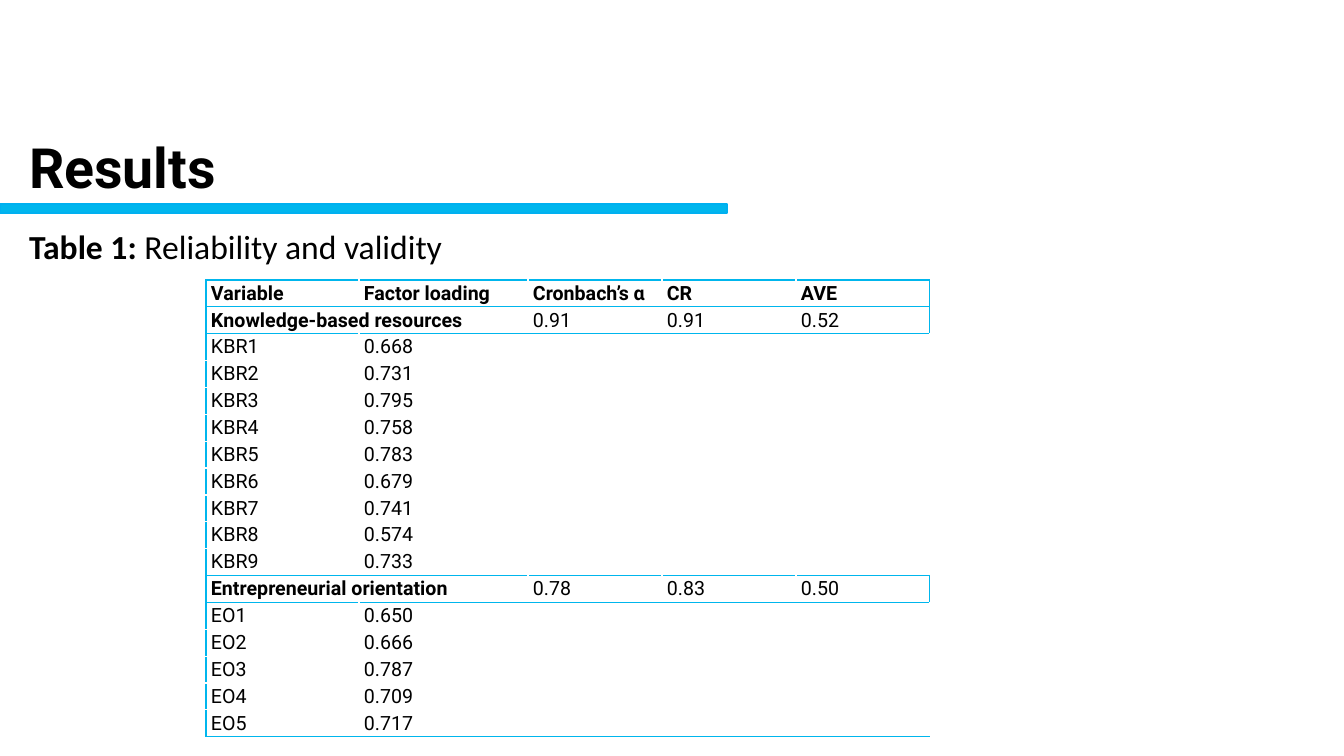
from dataclasses import dataclass
from typing import Any

from lxml import etree
from pptx import Presentation
from pptx import util as u
from pptx.dml.color import RGBColor
from pptx.enum import shapes, text
from pptx.oxml import ns

BLUE, WHITE, BLACK = "00B6ED", "FFFFFF", "000000"
COLUMN_WIDTHS = (153, 169, 134, 134, 134)
TABLE_HEIGHT = 457


@dataclass
class Box:
    left: int
    top: int
    width: int
    height: int

    def emu(self) -> tuple[int, ...]:
        return px(self.left), px(self.top), px(self.width), px(self.height)


@dataclass
class Span:
    words: str
    size: float
    font: str
    bold: bool = False


@dataclass
class Row:
    cells: tuple[str, ...]
    heading: bool = False


@dataclass
class Construct:
    name: str
    scores: tuple[str, str, str]
    code: str
    loadings: tuple[str, ...]

    def rows(self) -> list[Row]:
        items = [Row((f"{self.code}{number}", loading, "", "", ""))
                 for number, loading in enumerate(self.loadings, 1)]
        return [Row((self.name, "", *self.scores), True), *items]


CONSTRUCTS = (
    Construct("Knowledge-based resources", ("0.91", "0.91", "0.52"), "KBR",
              ("0.668", "0.731", "0.795", "0.758", "0.783",
               "0.679", "0.741", "0.574", "0.733")),
    Construct("Entrepreneurial orientation", ("0.78", "0.83", "0.50"), "EO",
              ("0.650", "0.666", "0.787", "0.709", "0.717")),
)


def px(length: int) -> int:
    return round(length * 914400 / 100.8)


def colour(value: str) -> RGBColor:
    return RGBColor.from_string(value)


def apply(target: Any, formats: dict[str, Any]) -> None:
    for name, value in formats.items():
        setattr(target, name, value)


def write(para: Any, spans: list[Span]) -> None:
    for item in spans:
        span = para.add_run()
        span.text = item.words
        apply(span.font, {"size": u.Pt(item.size), "name": item.font, "bold": item.bold})
        span.font.color.rgb = colour(BLACK)


def fill_placeholder(holder: Any, box: Box, anchor: Any, spans: list[Span]) -> None:
    apply(holder, dict(zip(("left", "top", "width", "height"), box.emu())))
    apply(holder.text_frame, {"word_wrap": True, "vertical_anchor": anchor,
                              "auto_size": text.MSO_AUTO_SIZE.NONE})
    para = holder.text_frame.paragraphs[0]
    properties = para._p.get_or_add_pPr()
    properties.set("marL", "0")
    properties.set("indent", "0")
    etree.SubElement(properties, ns.qn("a:buNone"))
    apply(para, {"alignment": text.PP_ALIGN.LEFT, "line_spacing": 0.9,
                 "space_before": u.Pt(0)})
    write(para, spans)


def add_border(cell: Any, side: str, value: str) -> None:
    line = etree.SubElement(cell._tc.get_or_add_tcPr(), ns.qn(f"a:ln{side}"),
                            w=str(u.Pt(1)))
    fill = etree.SubElement(line, ns.qn("a:solidFill"))
    etree.SubElement(fill, ns.qn("a:srgbClr"), val=value)


def add_results_table(page: Any, rows: list[Row]) -> None:
    last_row, last_column = len(rows) - 1, len(COLUMN_WIDTHS) - 1
    box = Box(206, 280, sum(COLUMN_WIDTHS), TABLE_HEIGHT)
    table = page.shapes.add_table(len(rows), len(COLUMN_WIDTHS), *box.emu()).table
    apply(table, {"first_row": False, "horz_banding": False})
    for column, width in zip(table.columns, COLUMN_WIDTHS):
        column.width = px(width)

    # Blue rules frame the table and every heading row
    ruled = [True] + [rows[i].heading or rows[i + 1].heading for i in range(last_row)] + [True]
    for i, row in enumerate(rows):
        table.rows[i].height = px(TABLE_HEIGHT) // len(rows)
        for j, words in enumerate(row.cells):
            cell = table.cell(i, j)
            edges = {"L": j == 0, "R": j == last_column, "T": ruled[i], "B": ruled[i + 1]}
            for side, blue in edges.items():
                add_border(cell, side, BLUE if blue else WHITE)
            cell.fill.background()
            apply(cell, {"margin_left": px(5), "margin_right": px(5), "margin_top": 0,
                         "margin_bottom": 0, "vertical_anchor": text.MSO_ANCHOR.MIDDLE})
            if words:
                bold = i == 0 or (row.heading and j == 0)
                write(cell.text_frame.paragraphs[0], [Span(words, 14, "Roboto", bold)])

        # Construct names span two columns, loadings the last four
        if i > 0:
            first, last = (0, 1) if row.heading else (1, last_column)
            table.cell(i, first).merge(table.cell(i, last))


def main() -> None:
    deck = Presentation()
    apply(deck, {"slide_width": px(1344), "slide_height": px(756)})
    page = deck.slides.add_slide(deck.slide_layouts[1])

    # Title and table caption
    fill_placeholder(page.shapes.title, Box(19, 132, 1212, 77), text.MSO_ANCHOR.MIDDLE,
                     [Span("Results", 39.6, "Roboto", True)])
    fill_placeholder(page.placeholders[1], Box(19, 225, 1142, 39), text.MSO_ANCHOR.TOP,
                     [Span("Table 1:", 24, "Calibri", True),
                      Span(" Reliability and validity", 24, "Calibri")])

    # Bar under the title
    bar = page.shapes.add_shape(shapes.MSO_SHAPE.RECTANGLE, *Box(0, 204, 727, 9).emu())
    bar.shadow.inherit = False
    bar.fill.solid()
    bar.fill.fore_color.rgb = colour(BLUE)
    bar.line.color.rgb = colour("00B0F0")
    bar.line.width = u.Pt(1)

    # Reliability and validity table
    header = Row(("Variable", "Factor loading", "Cronbach’s α", "CR", "AVE"), True)
    add_results_table(page, [header] + [row for item in CONSTRUCTS for row in item.rows()])
    deck.save("out.pptx")


if __name__ == "__main__":
    main()
